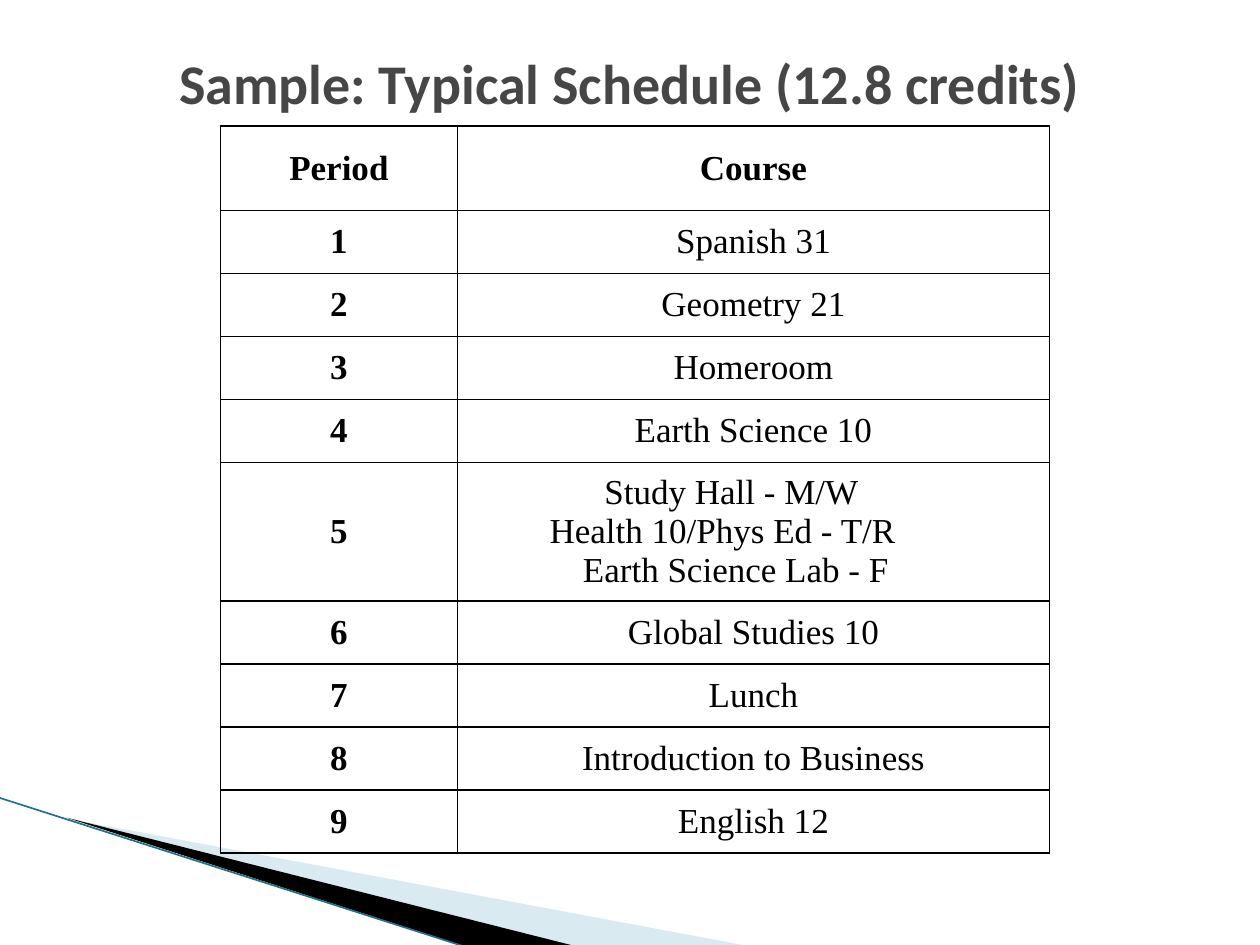
from lxml.etree import SubElement
from pptx import Presentation
from pptx.dml.color import RGBColor
from pptx.enum.shapes import MSO_CONNECTOR
from pptx.enum.text import MSO_ANCHOR, PP_ALIGN
from pptx.oxml.ns import qn
from pptx.util import Inches, Pt

BLACK = RGBColor(0x00, 0x00, 0x00)
TITLE_GRAY = RGBColor(0x46, 0x46, 0x46)
PALE_BLUE = RGBColor(0xA0, 0xCB, 0xDC)
TEAL = RGBColor(0x1F, 0x73, 0x89)

TITLE = "Sample: Typical Schedule (12.8 credits)"
# Each course line: text and left indent in inches
SCHEDULE = [
    ("Period", [("Course", 0)]),
    ("1", [("Spanish 31", 0)]),
    ("2", [("Geometry 21", 0)]),
    ("3", [("Homeroom", 0)]),
    ("4", [("Earth Science 10", 0)]),
    ("5", [("Study Hall - M/W", 0.14),
           ("Health 10/Phys Ed - T/R", 0),
           ("Earth Science Lab - F", 0.21)]),
    ("6", [("Global Studies 10", 0)]),
    ("7", [("Lunch", 0)]),
    ("8", [("Introduction to Business", 0)]),
    ("9", [("English 12", 0)]),
]
COLUMN_WIDTHS = (1.88, 4.7)
HEADER_HEIGHT, ROW_HEIGHT, SPLIT_HEIGHT = 0.67, 0.5, 1.1
SPLIT_MARGIN = 0.69  # right margin that shifts the three-line cell to the left

# Corner wedges: points, fill colour, opacity in percent
WEDGES = [
    ([(0.55, 6.5), (5.95, 7.51), (4.56, 7.51)], PALE_BLUE, 40),
    ([(0.53, 6.49), (4.57, 7.51), (3.72, 7.52)], BLACK, 100),
]


def write_lines(frame, lines, **font_values):
    for index, (text, indent) in enumerate(lines):
        paragraph = frame.paragraphs[0] if index == 0 else frame.add_paragraph()
        paragraph.alignment = PP_ALIGN.CENTER
        if indent:
            paragraph._p.get_or_add_pPr().set("marL", str(Inches(indent)))
        run = paragraph.add_run()
        run.text = text
        color = font_values["color"]
        run.font.color.rgb = color
        for name, value in font_values.items():
            if name != "color":
                setattr(run.font, name, value)


def set_borders(cell):
    properties = cell._tc.get_or_add_tcPr()
    for position, side in enumerate(("lnL", "lnR", "lnT", "lnB")):
        line = properties.makeelement(qn(f"a:{side}"), {"w": str(Pt(1))})
        fill = SubElement(line, qn("a:solidFill"))
        SubElement(fill, qn("a:srgbClr"), val=str(BLACK))
        properties.insert(position, line)


presentation = Presentation()
presentation.slide_width, presentation.slide_height = Inches(10), Inches(7.5)
slide = presentation.slides.add_slide(presentation.slide_layouts[6])

# Corner decoration
for points, color, opacity in WEDGES:
    corners = [(Inches(x), Inches(y)) for x, y in points]
    builder = slide.shapes.build_freeform(*corners[0])
    builder.add_line_segments(corners[1:], close=True)
    wedge = builder.convert_to_shape()
    wedge.shadow.inherit = False
    wedge.fill.solid()
    wedge.fill.fore_color.rgb = color
    wedge.line.fill.background()
    if opacity < 100:
        color_element = wedge._element.spPr.find(qn("a:solidFill"))[0]
        SubElement(color_element, qn("a:alpha"), val=str(opacity * 1000))

edge = slide.shapes.add_connector(
    MSO_CONNECTOR.STRAIGHT, Inches(-0.01), Inches(6.33), Inches(3.71), Inches(7.52))
edge.line.color.rgb = TEAL
edge.line.width = Pt(0.95)
SubElement(edge._element.spPr, qn("a:effectLst"))

# Schedule table
heights = [SPLIT_HEIGHT if len(lines) > 1 else ROW_HEIGHT for _, lines in SCHEDULE]
heights[0] = HEADER_HEIGHT
table = slide.shapes.add_table(
    len(SCHEDULE), len(COLUMN_WIDTHS), Inches(1.75), Inches(1),
    Inches(sum(COLUMN_WIDTHS)), Inches(sum(heights))).table
table.horz_banding = False
for column, width in zip(table.columns, COLUMN_WIDTHS):
    column.width = Inches(width)

for row_index, (period, lines) in enumerate(SCHEDULE):
    table.rows[row_index].height = Inches(heights[row_index])
    for column_index, cell_lines in enumerate(([(period, 0)], lines)):
        cell = table.cell(row_index, column_index)
        cell_format = {
            "vertical_anchor": MSO_ANCHOR.MIDDLE,
            "margin_left": Inches(0.2),
            "margin_right": Inches(SPLIT_MARGIN if len(cell_lines) > 1 else 0.2),
            "margin_top": Inches(0.05),
            "margin_bottom": Inches(0.05),
        }
        for name, value in cell_format.items():
            setattr(cell, name, value)
        cell.fill.background()
        set_borders(cell)
        write_lines(cell.text_frame, cell_lines, name="Times New Roman", size=Pt(20),
                    bold=row_index == 0 or column_index == 0, color=BLACK)

# Title
title = slide.shapes.add_textbox(Inches(0.5), Inches(0.03), Inches(9), Inches(1.25))
title.text_frame.word_wrap = True
title.text_frame.vertical_anchor = MSO_ANCHOR.MIDDLE
write_lines(title.text_frame, [(TITLE, 0)], name="Calibri", size=Pt(32),
            bold=True, color=TITLE_GRAY)

presentation.save("out.pptx")
